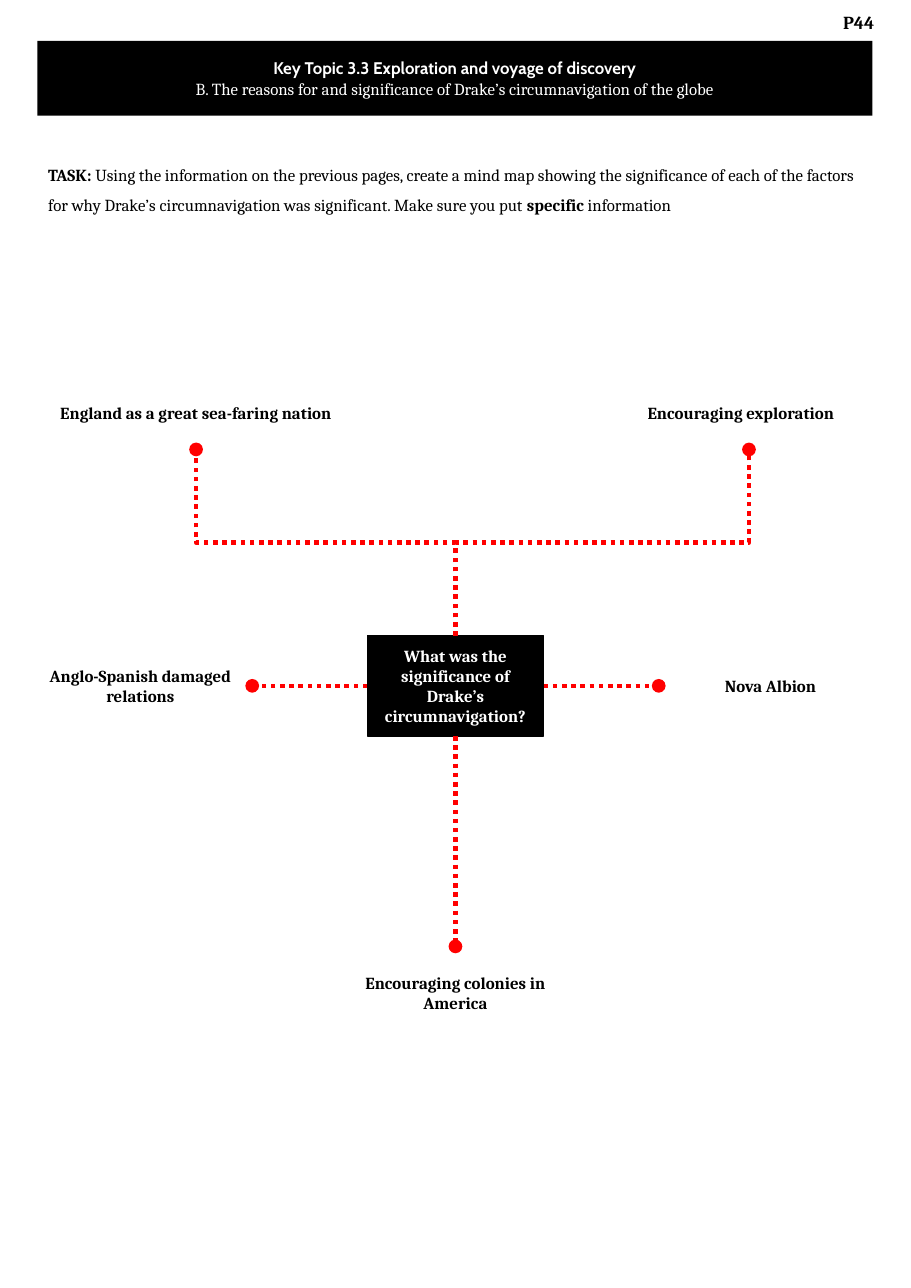
from pptx import Presentation, util as u
from pptx.dml.color import RGBColor
from pptx.enum import dml, shapes, text
from pptx.oxml import xmlchemy as x

W, H = u.Inches(8.27), u.Inches(11.69)
COL, ROW = W / 100, H / 100  # grid of 100 columns by 100 rows
BLACK, WHITE, RED = "000000", "FFFFFF", "FF0000"
BODY, HEADING = "Cambria", "Cabin"
CENTER, LEFT = text.PP_ALIGN.CENTER, text.PP_ALIGN.LEFT

# Hub of the mind map and its branches, in columns and rows
HUB_X, HUB_Y, HUB_W, HUB_H = 50, 53.25, 19.35, 7.78
REACH, LABEL_W, LABEL_H = 22.31, 24.55, 4.02
UPPER_TIP, LOWER_TIP, UPPER_LABEL = 34.9, 73.48, 30.88
MARGIN, CONTENT_W = 4.11, 91.66


def color(hex_value):
    return RGBColor.from_string(hex_value)


def grid(left, top, width, height):
    return [int(n * unit) for n, unit in
            zip((left, top, width, height), (COL, ROW, COL, ROW))]


def add_run(p, words, bold=True, font=BODY, size=11, ink=BLACK):
    r = p.add_run()
    r.text = words
    r.font.name, r.font.size, r.font.bold = font, u.Pt(size), bold
    r.font.color.rgb = color(ink)


def set_frame(sp, anchor, inset_y=0.05):
    tf = sp.text_frame
    tf.word_wrap = True
    tf.auto_size = text.MSO_AUTO_SIZE.NONE
    tf.vertical_anchor = anchor
    tf.margin_left = tf.margin_right = u.Inches(0.1)
    tf.margin_top = tf.margin_bottom = u.Inches(inset_y)
    return tf


def fill_black(sp):
    sp.fill.solid()
    sp.fill.fore_color.rgb = color(BLACK)


def add_text(s, box, runs, align=CENTER, size=11, inset_y=0.05):
    """Text box with one paragraph; runs are (words, bold) pairs."""
    sp = s.shapes.add_textbox(*grid(*box))
    p = set_frame(sp, text.MSO_ANCHOR.TOP, inset_y).paragraphs[0]
    p.alignment = align
    for words, bold in runs:
        add_run(p, words, bold, size=size)
    return p


def add_banner(s, heading, subheading):
    sp = s.shapes.title
    sp.left, sp.top, sp.width, sp.height = grid(MARGIN, 3.17, CONTENT_W, 5.82)
    fill_black(sp)
    tf = set_frame(sp, text.MSO_ANCHOR.MIDDLE, 0.1)
    p = tf.paragraphs[0]
    add_run(p, heading, font=HEADING, ink=WHITE)
    p.alignment = CENTER
    p = tf.add_paragraph()
    add_run(p, subheading, bold=False, ink=WHITE)
    p.alignment = CENTER


def add_hub(s, words):
    box = grid(HUB_X - HUB_W / 2, HUB_Y - HUB_H / 2, HUB_W, HUB_H)
    sp = s.shapes.add_shape(shapes.MSO_SHAPE.RECTANGLE, *box)
    sp.shadow.inherit = False
    fill_black(sp)
    sp.line.color.rgb = color(BLACK)
    sp.line.width = u.Pt(1)
    p = set_frame(sp, text.MSO_ANCHOR.MIDDLE).paragraphs[0]
    p.alignment = CENTER
    add_run(p, words, ink=WHITE)


def add_branch(s, start, tip):
    """Dotted branch with a round tip; it bends where the ends do not line up."""
    (x1, y1), (x2, y2) = [(c * COL, r * ROW) for c, r in (start, tip)]
    bent = start[0] != tip[0] and start[1] != tip[1]
    kind = shapes.MSO_CONNECTOR.STRAIGHT
    if bent:
        # Drawn sideways around its centre, then turned so it leaves upwards
        kind = shapes.MSO_CONNECTOR.ELBOW
        cx, cy, run, rise = (x1 + x2) / 2, (y1 + y2) / 2, x2 - x1, y1 - y2
        x1, x2 = cx - rise / 2, cx + rise / 2
        y1, y2 = cy - run / 2, cy + run / 2
    sp = s.shapes.add_connector(kind, *map(int, (x1, y1, x2, y2)))
    if bent:
        sp._element.spPr.xfrm.set("rot", str(270 * 60000))
    sp.line.color.rgb = color(RED)
    sp.line.width = u.Pt(3)
    sp.line.dash_style = dml.MSO_LINE.ROUND_DOT
    sp.line._get_or_add_ln().append(x.OxmlElement("a:tailEnd"))
    sp.line._get_or_add_ln()[-1].set("type", "oval")
    sp._element.spPr.append(x.OxmlElement("a:effectLst"))


def main():
    prs = Presentation()
    prs.slide_width, prs.slide_height = W, H
    s = prs.slides.add_slide(prs.slide_layouts[5])

    # Page number, banner and task
    add_text(s, (90.57, 0, 7.38, 7.61), [("P44", True)], size=12, inset_y=0.1)
    add_banner(s, "Key Topic 3.3 Exploration and voyage of discovery",
               "B. The reasons for and significance of Drake’s "
               "circumnavigation of the globe")
    task = add_text(s, (MARGIN, 11.55, CONTENT_W, 5.3), [
        ("TASK: ", True),
        ("Using the information on the previous pages, create a mind map "
         "showing the significance of each of the factors for why Drake’s "
         "circumnavigation was significant. Make sure you put ", False),
        ("specific ", True),
        ("information", False)], LEFT)
    task.line_spacing = 1.5

    # Mind map: hub, then each factor with its branch
    add_hub(s, "What was the significance of Drake’s circumnavigation?")
    top, bottom = (HUB_X, HUB_Y - HUB_H / 2), (HUB_X, HUB_Y + HUB_H / 2)
    left, right = (HUB_X - HUB_W / 2, HUB_Y), (HUB_X + HUB_W / 2, HUB_Y)
    factors = [
        ("England as a great sea-faring nation", CENTER,
         (MARGIN, UPPER_LABEL, 34.82, LABEL_H), top, (21.52, UPPER_TIP)),
        ("Encouraging exploration", LEFT,
         (69.89, UPPER_LABEL, LABEL_W, LABEL_H), top, (82.22, UPPER_TIP)),
        ("Anglo-Spanish damaged relations", CENTER,
         (3.14, 51.24, LABEL_W, LABEL_H), left, (HUB_X - REACH, HUB_Y)),
        ("Nova Albion", CENTER,
         (HUB_X + REACH, 52.01, LABEL_W, 2.48), right, (HUB_X + REACH, HUB_Y)),
        ("Encouraging colonies in America", CENTER,
         (HUB_X - LABEL_W / 2, 75.1, LABEL_W, LABEL_H), bottom,
         (HUB_X, LOWER_TIP)),
    ]
    for words, align, box, start, tip in factors:
        add_text(s, box, [(words, True)], align)
        add_branch(s, start, tip)

    prs.save("out.pptx")


if __name__ == "__main__":
    main()
